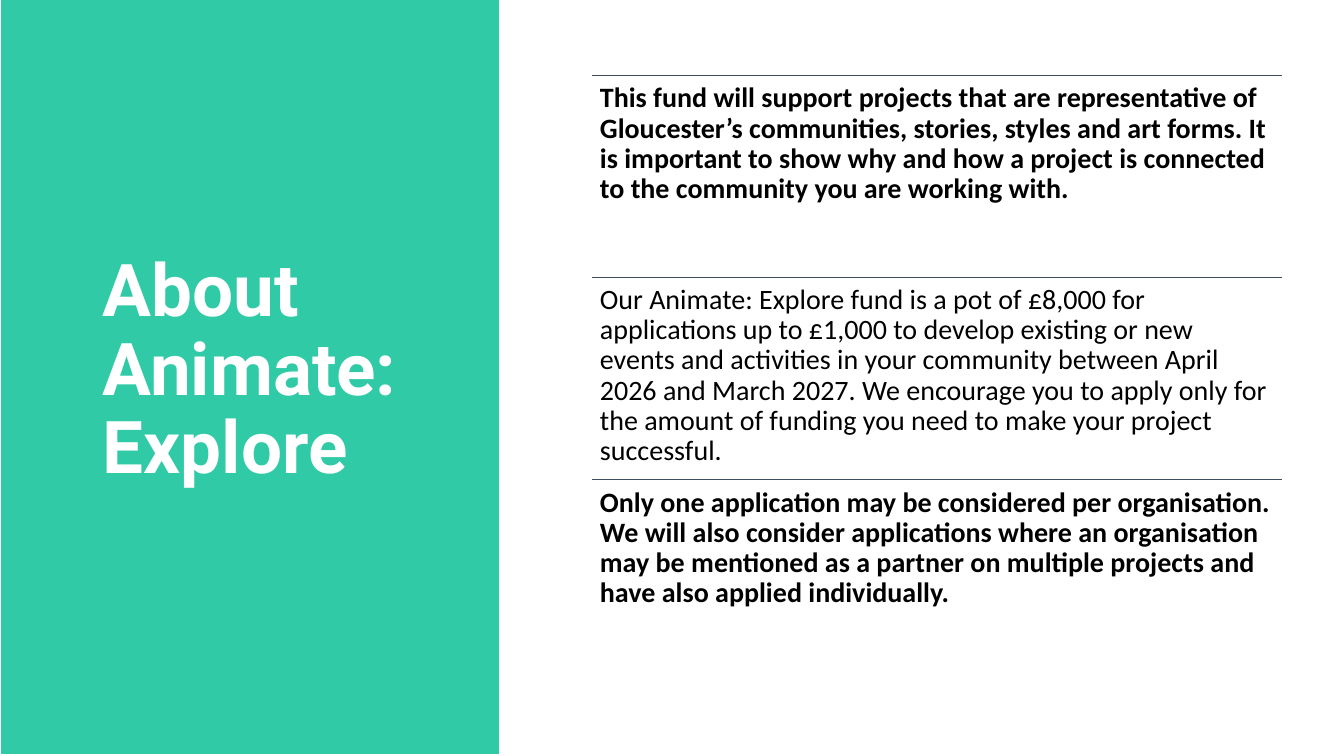
from dataclasses import dataclass

from lxml import etree
from pptx import Presentation
from pptx import util as u
from pptx.dml.color import RGBColor
from pptx.enum import shapes, text
from pptx.oxml.ns import qn

PX = u.Inches(1) // 100


@dataclass(frozen=True)
class Theme:
    panel: str = "30CAA7"
    light: str = "FFFFFF"
    rule: str = "3E4C60"
    ink: str = "000000"
    title_font: str = "Roboto"
    body_font: str = "Calibri"
    title_size: int = 52
    body_size: int = 20
    line_width: int = 1


THEME = Theme()
TITLE = "About Animate: Explore"
STATEMENTS = [
    ("This fund will support projects that are representative of Gloucester’s "
     "communities, stories, styles and art forms. It is important to show why and "
     "how a project is connected to the community you are working with.", True),
    ("Our Animate: Explore fund is a pot of £8,000 for applications up to £1,000 to "
     "develop existing or new events and activities in your community between April "
     "2026 and March 2027. We encourage you to apply only for the amount of funding "
     "you need to make your project successful.", False),
    ("Only one application may be considered per organisation. We will also consider "
     "applications where an organisation may be mentioned as a partner on multiple "
     "projects and have also applied individually.", True),
]
LIST_LEFT, LIST_TOP, LIST_WIDTH, LIST_HEIGHT = 587, 75, 685, 602


def px(*lengths):
    return [length * PX for length in lengths]


def apply(target, values):
    for name, value in values.items():
        setattr(target, name, value)


def set_line(line, color):
    line.color.rgb = RGBColor.from_string(color)
    line.width = u.Pt(THEME.line_width)


def write(shape, words, color, frame_format, paragraph_format, font_format):
    frame = shape.text_frame
    frame.text = words
    paragraph = frame.paragraphs[0]
    apply(frame, {"word_wrap": True, "auto_size": text.MSO_AUTO_SIZE.NONE} | frame_format)
    apply(paragraph, {"alignment": text.PP_ALIGN.LEFT, "line_spacing": 0.9} | paragraph_format)
    font = paragraph.runs[0].font
    apply(font, font_format)
    font.color.rgb = RGBColor.from_string(color)


def add_panel(slide, *box):
    """Add the coloured side panel behind everything else."""
    panel = slide.shapes.add_shape(shapes.MSO_SHAPE.RECTANGLE, *px(*box))
    panel.shadow.inherit = False
    panel.fill.solid()
    panel.fill.fore_color.rgb = RGBColor.from_string(THEME.panel)
    set_line(panel.line, THEME.light)
    slide.shapes._spTree.insert(2, panel._element)


def set_title(slide, *box):
    title = slide.shapes.title
    apply(title, dict(zip(("left", "top", "width", "height"), px(*box))))
    write(title, TITLE, THEME.light,
          {"vertical_anchor": text.MSO_ANCHOR.MIDDLE}, {},
          {"name": THEME.title_font, "size": u.Pt(THEME.title_size), "bold": True})


def add_rule(slide, left, top, width):
    rule = slide.shapes.add_connector(
        shapes.MSO_CONNECTOR.STRAIGHT, *px(left, top, left + width, top))
    set_line(rule.line, THEME.rule)
    etree.SubElement(rule._element.spPr, qn("a:effectLst"))


def add_statement(slide, words, bold, *box):
    statement = slide.shapes.add_textbox(*px(*box))
    margins = {f"margin_{side}": 8 * PX for side in ("left", "top", "right", "bottom")}
    write(statement, words, THEME.ink,
          margins | {"vertical_anchor": text.MSO_ANCHOR.TOP},
          {"space_after": u.Pt(7)},
          {"name": THEME.body_font, "size": u.Pt(THEME.body_size), "bold": bold})


def main():
    presentation = Presentation()
    apply(presentation, {"slide_width": 1333 * PX, "slide_height": 750 * PX})
    slide = presentation.slides.add_slide(presentation.slide_layouts.get_by_name("Title Only"))

    add_panel(slide, 0, -1, 496, 750)
    set_title(slide, 92, 61, 364, 615)
    for index, (words, bold) in enumerate(STATEMENTS):
        top = LIST_TOP + index * LIST_HEIGHT // len(STATEMENTS)
        add_rule(slide, LIST_LEFT, top, LIST_WIDTH)
        add_statement(slide, words, bold, LIST_LEFT, top, LIST_WIDTH,
                      LIST_HEIGHT // len(STATEMENTS))

    presentation.save("out.pptx")


if __name__ == "__main__":
    main()
